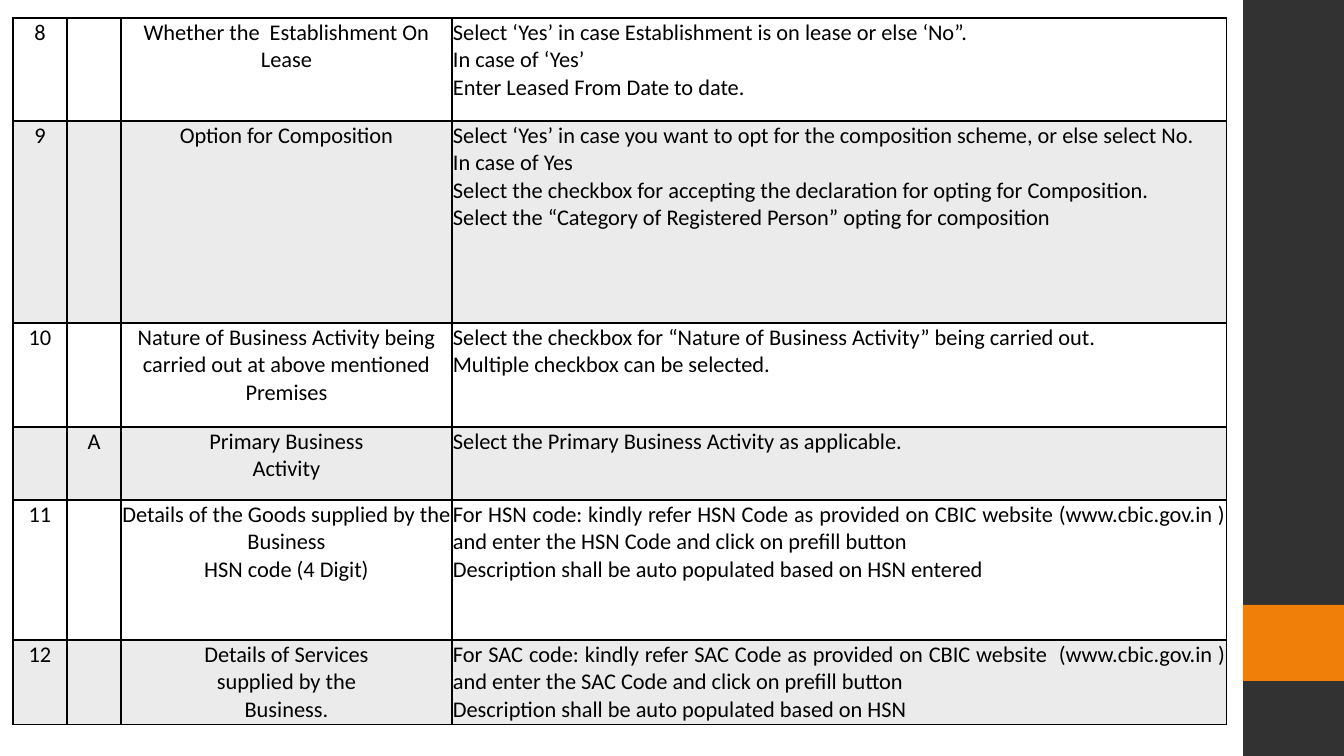
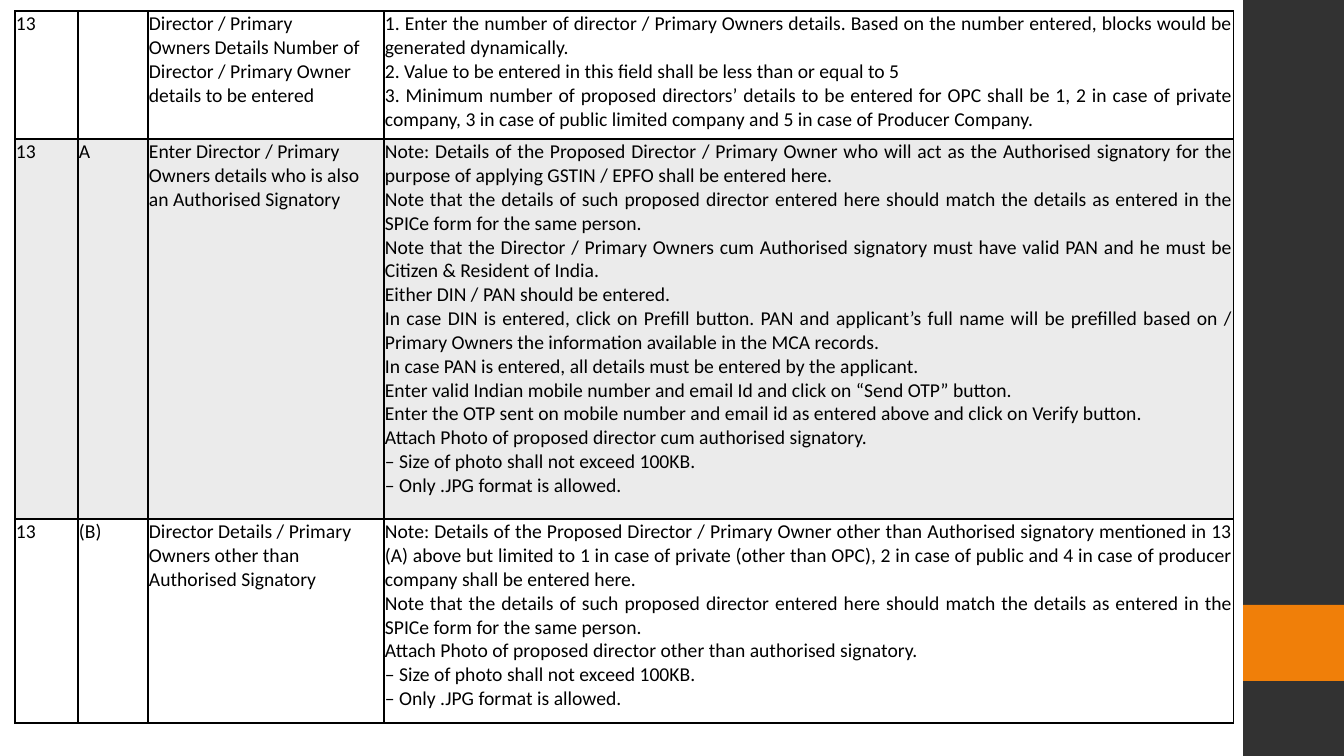
from dataclasses import dataclass

from lxml import etree
from pptx import Presentation
from pptx import util as u
from pptx.dml.color import RGBColor
from pptx.enum import shapes, text
from pptx.oxml import ns

PX = 914400 / 100.8
FONT = "Calibri"
BLACK = RGBColor(0x00, 0x00, 0x00)
CHARCOAL = RGBColor(0x32, 0x32, 0x32)
ORANGE = RGBColor(0xF0, 0x7F, 0x09)
GREY = RGBColor(0xEB, 0xEB, 0xEB)
CENTER = text.PP_ALIGN.CENTER
LEFT = text.PP_ALIGN.LEFT
JUSTIFY = text.PP_ALIGN.JUSTIFY

SAME_PERSON = (
    "Note that the details of such proposed director entered here should match "
    "the details as entered in the SPICe form for the same person."
)
PHOTO_RULES = (
    "– Size of photo shall not exceed 100KB.",
    "– Only .JPG format is allowed.",
)


@dataclass(frozen=True)
class Band:
    top: int
    height: int
    color: RGBColor


@dataclass(frozen=True)
class Entry:
    height: int
    number: str
    letter: str
    field: tuple[str, ...]
    guidance: tuple[str, ...]


@dataclass(frozen=True)
class FormTable:
    left: int
    top: int
    columns: tuple[int, ...]
    size: int
    label_align: text.PP_ALIGN
    entries: tuple[Entry, ...]


SIDE_BANDS = (Band(0, 756, CHARCOAL), Band(605, 76, ORANGE))

BUSINESS = FormTable(13, 18, (54, 54, 331, 775), 16, CENTER, (
    Entry(103, "8", "", ("Whether the  Establishment On\nLease",), (
        "Select ‘Yes’ in case Establishment is on lease or else ‘No”.",
        "In case of ‘Yes’",
        "Enter Leased From Date to date.",
    )),
    Entry(202, "9", "", ("Option for Composition",), (
        "Select ‘Yes’ in case you want to opt for the composition scheme, or else select No.",
        "In case of Yes",
        "Select the checkbox for accepting the declaration for opting for Composition.",
        "Select the “Category of Registered Person” opting for composition",
    )),
    Entry(104, "10", "", (
        "Nature of Business Activity being carried out at above mentioned Premises",
    ), (
        "Select the checkbox for “Nature of Business Activity” being carried out.",
        "Multiple checkbox can be selected.",
    )),
    Entry(73, "", "A", ("Primary Business\nActivity",), (
        "Select the Primary Business Activity as applicable.",
    )),
    Entry(140, "11", "", (
        "Details of the Goods supplied by the Business",
        "HSN code (4 Digit)",
    ), (
        "For HSN code: kindly refer HSN Code as provided on CBIC website (www.cbic.gov.in ) "
        "and enter the HSN Code and click on prefill button",
        "Description shall be auto populated based on HSN entered",
    )),
    Entry(85, "12", "", ("Details of Services\nsupplied by the\nBusiness.",), (
        "For SAC code: kindly refer SAC Code as provided on CBIC website  (www.cbic.gov.in ) "
        "and enter the SAC Code and click on prefill button",
        "Description shall be auto populated based on HSN",
    )),
))

DIRECTORS = FormTable(15, 11, (63, 70, 236, 850), 14, LEFT, (
    Entry(128, "13", "", (
        "Director / Primary\nOwners Details Number of Director / Primary Owner "
        "details to be entered",
    ), (
        "1. Enter the number of director / Primary Owners details. Based on the number "
        "entered, blocks would be generated dynamically.",
        "2. Value to be entered in this field shall be less than or equal to 5",
        "3. Minimum number of proposed directors’ details to be entered for OPC shall be 1, "
        "2 in case of private company, 3 in case of public limited company and 5 in case of "
        "Producer Company.",
    )),
    Entry(380, "13", "A", (
        "Enter Director / Primary Owners details who is also an Authorised Signatory",
    ), (
        "Note: Details of the Proposed Director / Primary Owner who will act as the "
        "Authorised signatory for the purpose of applying GSTIN / EPFO shall be entered here.",
        SAME_PERSON,
        "Note that the Director / Primary Owners cum Authorised signatory must have valid "
        "PAN and he must be Citizen & Resident of India.",
        "Either DIN / PAN should be entered.",
        "In case DIN is entered, click on Prefill button. PAN and applicant’s full name will "
        "be prefilled based on / Primary Owners the information available in the MCA records.",
        "In case PAN is entered, all details must be entered by the applicant.",
        "Enter valid Indian mobile number and email Id and click on “Send OTP” button.",
        "Enter the OTP sent on mobile number and email id as entered above and click on "
        "Verify button.",
        "Attach Photo of proposed director cum authorised signatory.",
        *PHOTO_RULES,
    )),
    Entry(204, "13", "(B)", (
        "Director Details / Primary Owners other than Authorised Signatory",
    ), (
        "Note: Details of the Proposed Director / Primary Owner other than Authorised "
        "signatory mentioned in 13 (A) above but limited to 1 in case of private (other than "
        "OPC), 2 in case of public and 4 in case of producer company shall be entered here.",
        SAME_PERSON,
        "Attach Photo of proposed director other than authorised signatory.",
        *PHOTO_RULES,
    )),
))


def px(length: int) -> u.Emu:
    return u.Emu(round(length * PX))


def move_band_to_layout(page, layout, band: Band) -> None:
    box = page.shapes.add_shape(
        shapes.MSO_SHAPE.RECTANGLE, px(1243), px(band.top), px(101), px(band.height)
    )
    box.shadow.inherit = False
    box.fill.solid()
    box.fill.fore_color.rgb = band.color
    box.line.fill.background()
    layout.shapes.element.append(box.element)


def add_borders(cell) -> None:
    properties = cell._tc.get_or_add_tcPr()
    for side in ("lnL", "lnR", "lnT", "lnB"):
        line = etree.SubElement(properties, ns.qn(f"a:{side}"), w=str(u.Pt(1)))
        fill = etree.SubElement(line, ns.qn("a:solidFill"))
        etree.SubElement(fill, ns.qn("a:srgbClr"), val=str(BLACK))


def fill_cell(cell, lines: tuple[str, ...], size: int, align, shaded: bool) -> None:
    cell.margin_left = cell.margin_right = cell.margin_top = cell.margin_bottom = px(1)
    add_borders(cell)
    if shaded:
        cell.fill.solid()
        cell.fill.fore_color.rgb = GREY
    else:
        cell.fill.background()
    frame = cell.text_frame
    for index, line in enumerate(lines):
        para = frame.add_paragraph() if index else frame.paragraphs[0]
        para.text = line
        para.alignment = align
        para.font.name = FONT
        para.font.size = u.Pt(size)
        para.font.color.rgb = BLACK


def add_form_table(page, form: FormTable) -> None:
    heights = [entry.height for entry in form.entries]
    table = page.shapes.add_table(
        len(heights), len(form.columns), px(form.left), px(form.top),
        px(sum(form.columns)), px(sum(heights)),
    ).table
    table.first_row = table.horz_banding = False
    for column, width in zip(table.columns, form.columns):
        column.width = px(width)
    aligns = (form.label_align,) * 3 + (JUSTIFY,)
    for index, (row, entry) in enumerate(zip(table.rows, form.entries)):
        row.height = px(entry.height)
        contents = ((entry.number,), (entry.letter,), entry.field, entry.guidance)
        for cell, lines, align in zip(row.cells, contents, aligns):
            fill_cell(cell, lines, form.size, align, index % 2 == 1)


def main() -> None:
    deck = Presentation()
    deck.slide_width, deck.slide_height = px(1344), px(756)
    layout = deck.slide_layouts[6]
    pages = [deck.slides.add_slide(layout) for _ in range(2)]
    for band in SIDE_BANDS:
        move_band_to_layout(pages[0], layout, band)
    for page, form in zip(pages, (BUSINESS, DIRECTORS)):
        add_form_table(page, form)
    deck.save("out.pptx")


if __name__ == "__main__":
    main()
